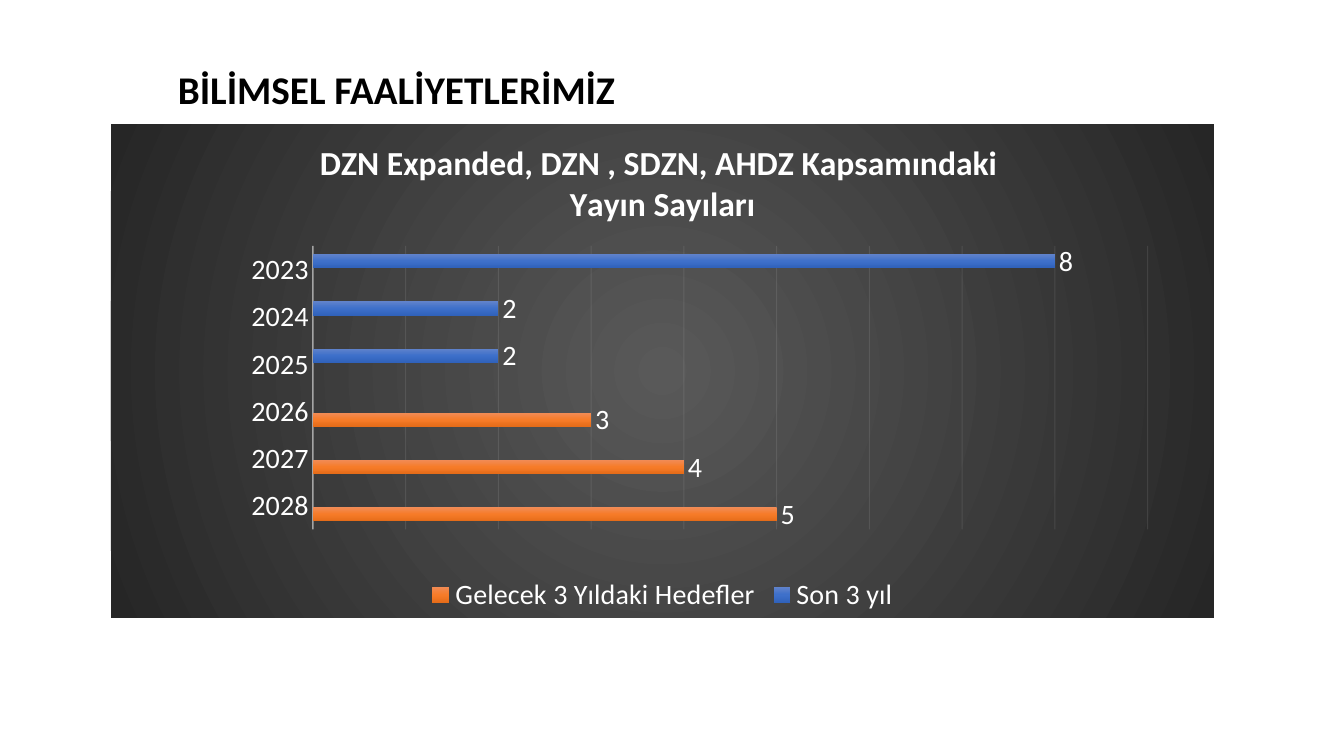
from dataclasses import dataclass

import pptx
import pptx.chart.data
import pptx.dml.color
import pptx.enum.chart
import pptx.enum.text
import pptx.oxml
import pptx.oxml.ns
import pptx.util

EMU_PER_PX = 914400 / 100.8
NAMESPACES = pptx.oxml.ns.nsdecls("a", "c")


@dataclass(frozen=True)
class Theme:
    font: str = "Calibri"
    heading_size: int = 28
    chart_title_size: int = 24
    chart_text_size: int = 20
    heading: str = "000000"
    chart_text: str = "FFFFFF"
    rule: str = "F2F2F2"
    backdrop: tuple = ((0, "595959"), (100, "262626"))
    recent: tuple = ((0, "6183CB"), (50, "3E70CA"), (100, "3062BB"))
    target: tuple = ((0, "F18C57"), (50, "F67B28"), (100, "E56C19"))


THEME = Theme()
YEARS = ("2023", "2024", "2025", "2026", "2027", "2028")
SERIES = (
    ("Son 3 yıl", (8, 2, 2, None, None, None), THEME.recent),
    ("Gelecek 3 Yıldaki Hedefler", (None, None, None, 3, 4, 5), THEME.target),
)
LINEAR_DOWN = '<a:lin ang="5400000" scaled="0"/>'
FROM_CENTRE = ('<a:path path="circle"><a:fillToRect l="50000" t="50000" '
               'r="50000" b="50000"/></a:path>')


def px(length):
    return pptx.util.Emu(round(length * EMU_PER_PX))


def style_font(font, size, color, bold=False):
    font.name = THEME.font
    font.size = pptx.util.Pt(size)
    font.bold = bold
    font.color.rgb = pptx.dml.color.RGBColor.from_string(color)


def gradient_properties(stops, direction):
    """Return a chart spPr element with a gradient fill and no outline."""
    stop_xml = "".join(
        f'<a:gs pos="{position * 1000}"><a:srgbClr val="{color}"/></a:gs>'
        for position, color in stops)
    return pptx.oxml.parse_xml(
        f'<c:spPr {NAMESPACES}><a:gradFill rotWithShape="1">'
        f'<a:gsLst>{stop_xml}</a:gsLst>{direction}</a:gradFill>'
        '<a:ln><a:noFill/></a:ln></c:spPr>')


def style_line(line, width, opacity):
    line.width = pptx.util.Pt(width)
    line.color.rgb = pptx.dml.color.RGBColor.from_string(THEME.rule)
    color = line.fill._xPr.find(".//" + pptx.oxml.ns.qn("a:srgbClr"))
    color.append(pptx.oxml.parse_xml(
        f'<a:alpha {NAMESPACES} val="{opacity * 1000}"/>'))


def place_plot(chart, x, y, w, h):
    """Fix the inner plot area, as fractions of the chart."""
    plot_area = chart._chartSpace.chart.plotArea
    for layout in plot_area.findall(pptx.oxml.ns.qn("c:layout")):
        plot_area.remove(layout)
    fractions = "".join(f'<c:{key} val="{value}"/>' for key, value in
                        (("x", x), ("y", y), ("w", w), ("h", h)))
    plot_area.insert(0, pptx.oxml.parse_xml(
        f'<c:layout {NAMESPACES}><c:manualLayout><c:layoutTarget val="inner"/>'
        '<c:xMode val="edge"/><c:yMode val="edge"/>'
        f'{fractions}</c:manualLayout></c:layout>'))


def add_heading(slide, text, left, top, width, height):
    heading = slide.shapes.add_textbox(px(left), px(top), px(width), px(height))
    frame = heading.text_frame
    frame.word_wrap = True
    frame.vertical_anchor = pptx.enum.text.MSO_ANCHOR.MIDDLE
    frame.text = text
    paragraph = frame.paragraphs[0]
    paragraph.line_spacing = 0.9
    style_font(paragraph.runs[0].font, THEME.heading_size, THEME.heading, True)


def style_title(chart, text):
    chart.has_title = True
    frame = chart.chart_title.text_frame
    frame.text = text
    for paragraph in frame.paragraphs:
        style_font(paragraph.runs[0].font, THEME.chart_title_size,
                   THEME.chart_text, True)
    chart.chart_title.include_in_layout = False


def style_axes(chart):
    years = chart.category_axis
    years.reverse_order = True
    years.major_tick_mark = pptx.enum.chart.XL_TICK_MARK.NONE
    style_line(years.format.line, 1, 54)
    counts = chart.value_axis
    counts.visible = False
    counts.minimum_scale, counts.maximum_scale, counts.major_unit = 0, 9, 1
    counts.has_major_gridlines = True
    style_line(counts.major_gridlines.format.line, 0.75, 10)


def style_bars(chart):
    plot = chart.plots[0]
    plot.gap_width = 115
    plot.overlap = -20
    plot.vary_by_categories = False
    for series, (_, _, stops) in zip(plot.series, SERIES):
        series.invert_if_negative = False
        properties = series._element.get_or_add_spPr()
        properties.getparent().replace(
            properties, gradient_properties(stops, LINEAR_DOWN))
        labels = series.data_labels
        labels.show_value = True
        labels.position = pptx.enum.chart.XL_LABEL_POSITION.OUTSIDE_END
        style_font(labels.font, THEME.chart_text_size, THEME.chart_text)


def add_publication_chart(slide, title, left, top, width, height):
    data = pptx.chart.data.CategoryChartData()
    data.categories = YEARS
    for name, values, _ in SERIES:
        data.add_series(name, values)
    chart = slide.shapes.add_chart(
        pptx.enum.chart.XL_CHART_TYPE.BAR_CLUSTERED,
        px(left), px(top), px(width), px(height), data).chart
    style_font(chart.font, THEME.chart_text_size, THEME.chart_text)
    chart._chartSpace.chart.addnext(
        gradient_properties(THEME.backdrop, FROM_CENTRE))
    style_title(chart, title)
    style_axes(chart)
    style_bars(chart)
    place_plot(chart, 0.183, 0.247, 0.757, 0.574)
    chart.has_legend = True
    chart.legend.position = pptx.enum.chart.XL_LEGEND_POSITION.BOTTOM
    chart.legend.include_in_layout = False
    style_font(chart.legend.font, THEME.chart_text_size, THEME.chart_text)


def main():
    presentation = pptx.Presentation()
    presentation.slide_width, presentation.slide_height = px(1344), px(756)
    slide = presentation.slides.add_slide(presentation.slide_layouts[6])
    add_heading(slide, "BİLİMSEL FAALİYETLERİMİZ", 168, 40, 814, 103)
    add_publication_chart(
        slide, "DZN Expanded, DZN , SDZN, AHDZ Kapsamındaki \nYayın Sayıları",
        111, 124, 1103, 494)
    presentation.save("out.pptx")


if __name__ == "__main__":
    main()
